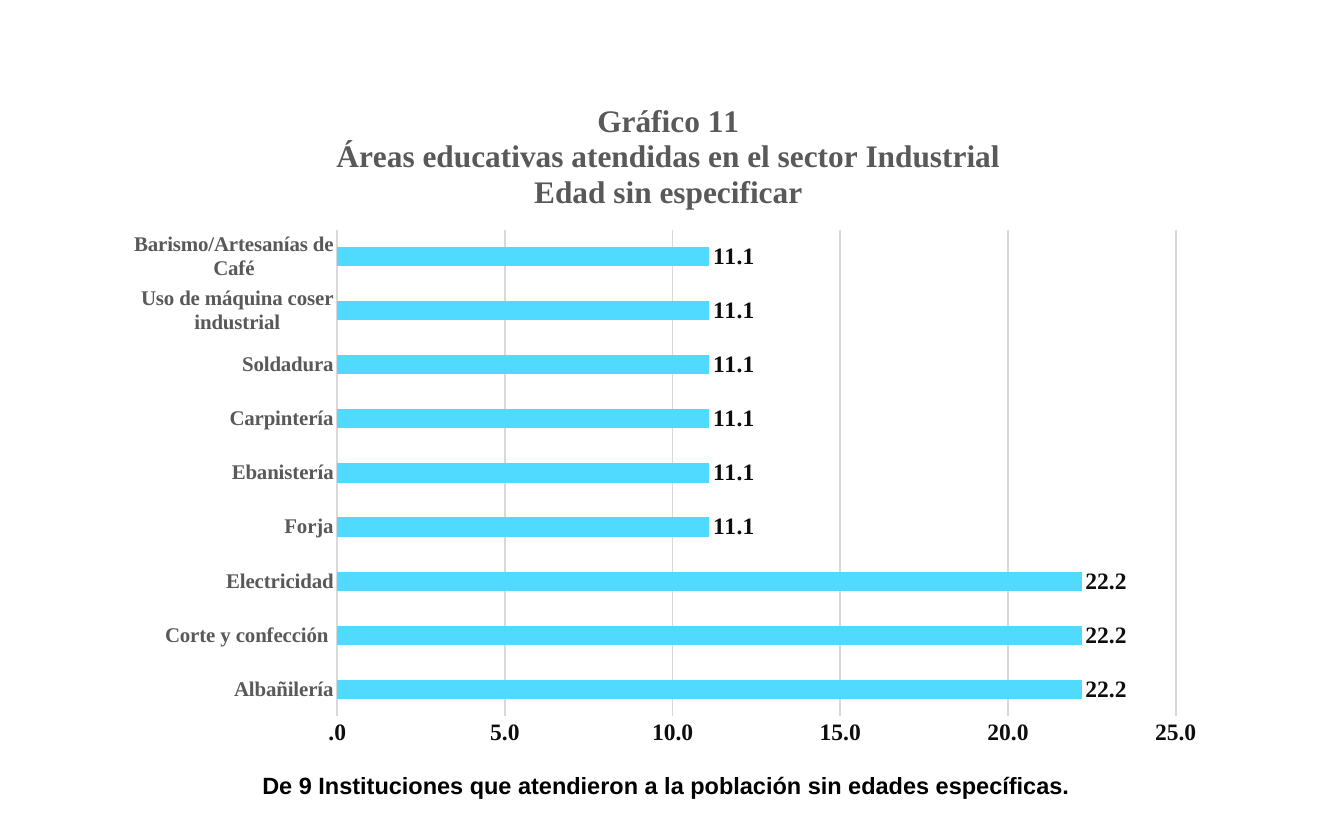
from dataclasses import dataclass

from lxml.etree import SubElement
from pptx import Presentation
from pptx.chart.chart import Chart
from pptx.chart.data import CategoryChartData
from pptx.dml.color import RGBColor
from pptx.enum.chart import XL_CHART_TYPE, XL_LABEL_POSITION, XL_TICK_MARK
from pptx.enum.text import MSO_AUTO_SIZE, PP_ALIGN
from pptx.oxml.ns import qn
from pptx.slide import Slide
from pptx.text.text import Font
from pptx.util import Inches, Pt

BLACK = RGBColor(0x00, 0x00, 0x00)
NEAR_BLACK = RGBColor(0x0D, 0x0D, 0x0D)
GRAY = RGBColor(0x59, 0x59, 0x59)
LIGHT_GRAY = RGBColor(0xD9, 0xD9, 0xD9)
SKY_BLUE = RGBColor(0x51, 0xDA, 0xFF)

NUMBER_FORMAT = "####.0"
TITLE_LINES = (
    "Gráfico 11",
    "Áreas educativas atendidas en el sector Industrial",
    "Edad sin especificar",
)
AREA_PERCENTAGES = {
    "Albañilería": 22.2,
    "Corte y confección ": 22.2,
    "Electricidad": 22.2,
    "Forja": 11.1,
    "Ebanistería": 11.1,
    "Carpintería": 11.1,
    "Soldadura": 11.1,
    "Uso de máquina coser industrial": 11.1,
    "Barismo/Artesanías de Café": 11.1,
}


@dataclass(frozen=True)
class TextStyle:
    size: int
    color: RGBColor
    name: str = "Times New Roman"
    bold: bool = True

    def apply(self, font: Font) -> None:
        font.size = Pt(self.size)
        font.color.rgb = self.color
        font.name = self.name
        font.bold = self.bold


CHART_STYLE = TextStyle(10, BLACK, bold=False)
TITLE_STYLE = TextStyle(24, GRAY)
CATEGORY_STYLE = TextStyle(16, GRAY)
VALUE_STYLE = TextStyle(18, NEAR_BLACK)
NOTE_STYLE = TextStyle(18, BLACK, "Arial")


def place_plot_area(chart: Chart, x: float, y: float, w: float, h: float) -> None:
    """Fix the inner plot area, in fractions of the chart size."""
    plot_area = chart.element.find(".//" + qn("c:plotArea"))
    for layout in plot_area.findall(qn("c:layout")):
        plot_area.remove(layout)
    layout = SubElement(plot_area, qn("c:layout"))
    plot_area.insert(0, layout)
    manual = SubElement(layout, qn("c:manualLayout"))
    settings = {"layoutTarget": "inner", "xMode": "edge", "yMode": "edge",
                "x": x, "y": y, "w": w, "h": h}
    for tag, value in settings.items():
        SubElement(manual, qn(f"c:{tag}")).set("val", str(value))


def add_title(chart: Chart) -> None:
    chart.has_title = True
    chart.chart_title.include_in_layout = False
    text_frame = chart.chart_title.text_frame
    text_frame.text = "\n".join(TITLE_LINES)
    for paragraph in text_frame.paragraphs:
        paragraph.alignment = PP_ALIGN.CENTER
        TITLE_STYLE.apply(paragraph.font)


def format_axes(chart: Chart) -> None:
    category_axis, value_axis = chart.category_axis, chart.value_axis
    for axis, style in ((category_axis, CATEGORY_STYLE), (value_axis, VALUE_STYLE)):
        axis.major_tick_mark = axis.minor_tick_mark = XL_TICK_MARK.NONE
        style.apply(axis.tick_labels.font)

    value_axis.minimum_scale = 0
    value_axis.maximum_scale = 25
    value_axis.major_unit = 5
    value_axis.has_major_gridlines = True
    value_axis.format.line.fill.background()
    value_axis.tick_labels.number_format = NUMBER_FORMAT
    value_axis.tick_labels.number_format_is_linked = False
    for line in (category_axis.format.line, value_axis.major_gridlines.format.line):
        line.color.rgb = LIGHT_GRAY
        line.width = Pt(1.34)


def format_bars(chart: Chart) -> None:
    plot = chart.plots[0]
    plot.gap_width = 182
    plot.vary_by_categories = False
    series = plot.series[0]
    series.invert_if_negative = False
    series.format.fill.solid()
    series.format.fill.fore_color.rgb = SKY_BLUE
    labels = series.data_labels
    labels.show_value = True
    labels.position = XL_LABEL_POSITION.OUTSIDE_END
    labels.number_format = NUMBER_FORMAT
    labels.number_format_is_linked = False
    VALUE_STYLE.apply(labels.font)


def add_areas_chart(slide: Slide) -> None:
    chart_data = CategoryChartData(number_format=NUMBER_FORMAT)
    chart_data.categories = list(AREA_PERCENTAGES)
    chart_data.add_series("Series 1", list(AREA_PERCENTAGES.values()))
    chart = slide.shapes.add_chart(
        XL_CHART_TYPE.BAR_CLUSTERED,
        Inches(1.24), Inches(0.86), Inches(11.73), Inches(7.19), chart_data,
    ).chart
    CHART_STYLE.apply(chart.font)
    chart.has_legend = False
    add_title(chart)
    format_axes(chart)
    format_bars(chart)
    place_plot_area(chart, 0.2, 0.22, 0.76, 0.72)


def add_note(slide: Slide) -> None:
    text_box = slide.shapes.add_textbox(
        Inches(2.44), Inches(8.1), Inches(9.41), Inches(0.42))
    text_frame = text_box.text_frame
    text_frame.word_wrap = True
    text_frame.auto_size = MSO_AUTO_SIZE.SHAPE_TO_FIT_TEXT
    paragraph = text_frame.paragraphs[0]
    paragraph.text = "De 9 Instituciones que atendieron a la población sin edades específicas."
    paragraph.alignment = PP_ALIGN.JUSTIFY
    paragraph.line_spacing = 1.15
    paragraph.space_after = Pt(10)
    paragraph_properties = paragraph.font._element.getparent()
    paragraph_properties.set("marL", str(Inches(0.25)))
    paragraph_properties.set("indent", "0")
    NOTE_STYLE.apply(paragraph.font)


def main() -> None:
    presentation = Presentation()
    presentation.slide_width = Inches(14.29)
    presentation.slide_height = Inches(8.9)
    blank_layout = presentation.slide_layouts.get_by_name("Blank")
    slide = presentation.slides.add_slide(blank_layout)
    add_note(slide)
    add_areas_chart(slide)
    presentation.save("out.pptx")


if __name__ == "__main__":
    main()
